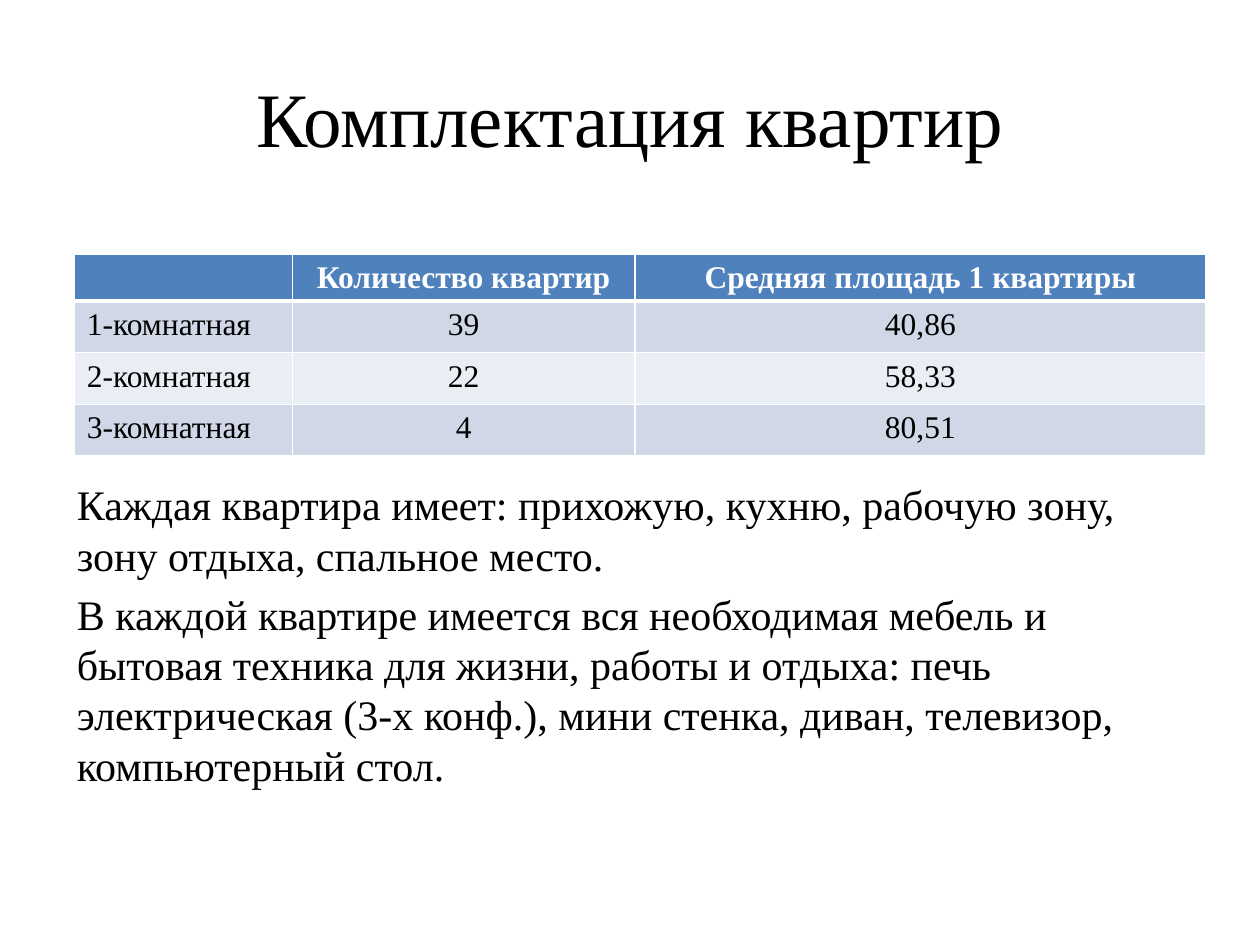
import pptx
import pptx.util
import pptx.dml.color
import pptx.enum.text
import pptx.oxml
import pptx.oxml.ns

Inches = pptx.util.Inches
Align = pptx.enum.text.PP_ALIGN
Anchor = pptx.enum.text.MSO_ANCHOR

# Content
FONT = "Times New Roman"
TITLE = "Комплектация квартир"
NOTES = [
    "Каждая квартира имеет: прихожую, кухню, рабочую зону, зону отдыха, "
    "спальное место.",
    "В каждой квартире имеется вся необходимая мебель и бытовая техника для "
    "жизни, работы и отдыха: печь электрическая (3-х конф.), мини стенка, "
    "диван, телевизор, компьютерный стол.",
]
FLATS = [
    ("", "Количество квартир", "Средняя площадь 1 квартиры"),
    ("1-комнатная", "39", "40,86"),
    ("2-комнатная", "22", "58,33"),
    ("3-комнатная", "4", "80,51"),
]
WIDTHS = [1.73, 2.72, 4.53]
HEIGHTS = [0.37, 0.41, 0.41, 0.41]
HEAD, BANDS = "4F81BD", ("D0D8E8", "E9EDF4")


def color(text):
    return pptx.dml.color.RGBColor.from_string(text)


def style(par, size, shade="000000", bold=False):
    for run in par.runs:
        font = run.font
        font.name, font.size, font.bold = FONT, pptx.util.Pt(size), bold
        font.color.rgb = color(shade)


def place(shape, left, top, width, height):
    shape.left, shape.top = Inches(left), Inches(top)
    shape.width, shape.height = Inches(width), Inches(height)


def border(cell, base):
    props = cell._tc.get_or_add_tcPr()
    sides = [("L", 1), ("R", 1), ("T", 1), ("B", base)]
    for pos, (side, width) in enumerate(sides):
        line = pptx.oxml.parse_xml(
            f'<a:ln{side} {pptx.oxml.ns.nsdecls("a")} w="{pptx.util.Pt(width)}">'
            '<a:solidFill><a:srgbClr val="FFFFFF"/></a:solidFill>'
            f'</a:ln{side}>')
        props.insert(pos, line)


deck = pptx.Presentation()
deck.slide_width, deck.slide_height = Inches(10), Inches(7.5)
slide = deck.slides.add_slide(deck.slide_layouts[1])

# Title
title = slide.shapes.title
place(title, 0.5, 0.3, 9, 1.25)
title.text_frame.text = TITLE
title.text_frame.vertical_anchor = Anchor.MIDDLE
par = title.text_frame.paragraphs[0]
par.alignment = Align.CENTER
style(par, 44)

# Body text without bullets
body = slide.placeholders[1]
place(body, 0.51, 3.75, 9, 3.39)
body.text_frame.text = "\n".join(NOTES)
for par in body.text_frame.paragraphs:
    style(par, 24)
    props = par._p.get_or_add_pPr()
    props.set("marL", "0")
    props.set("indent", "0")
    props.append(pptx.oxml.parse_xml(
        f'<a:buNone {pptx.oxml.ns.nsdecls("a")}/>'))

# Table of flats
table = slide.shapes.add_table(
    len(FLATS), len(WIDTHS), Inches(0.59), Inches(2.02),
    Inches(sum(WIDTHS)), Inches(sum(HEIGHTS))).table
for col, width in zip(table.columns, WIDTHS):
    col.width = Inches(width)
for row, height in zip(table.rows, HEIGHTS):
    row.height = Inches(height)

for r, flat in enumerate(FLATS):
    top = r == 0
    for c, text in enumerate(flat):
        cell = table.cell(r, c)
        cell.fill.solid()
        cell.fill.fore_color.rgb = color(HEAD if top else BANDS[(r - 1) % 2])
        border(cell, 3 if top else 1)
        if top:
            cell.margin_top = cell.margin_bottom = 0
            cell.vertical_anchor = Anchor.MIDDLE
        cell.text_frame.text = text
        par = cell.text_frame.paragraphs[0]
        par.alignment = Align.CENTER if c else Align.LEFT
        style(par, 18, "FFFFFF" if top else "000000", top)

deck.save("out.pptx")
